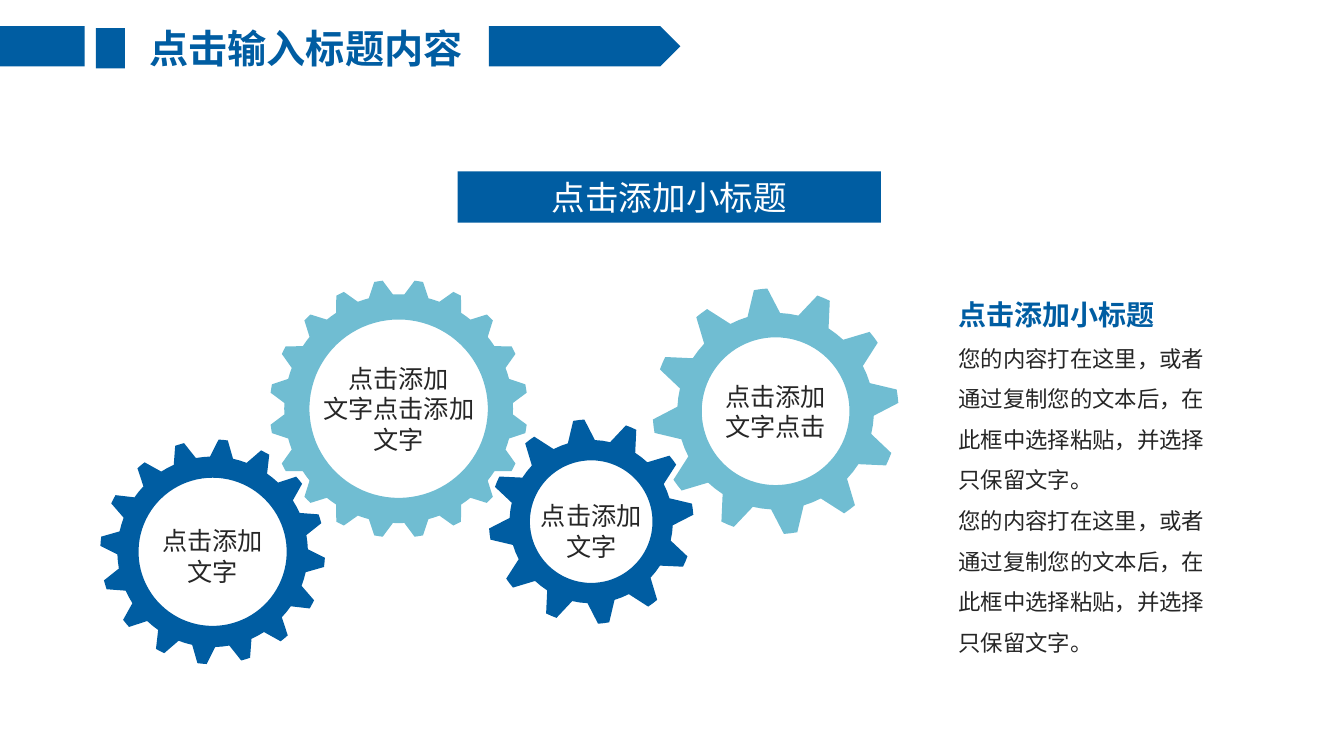
import math

import pptx
import pptx.dml.color
import pptx.enum.shapes
import pptx.enum.text
import pptx.oxml.ns
import pptx.util
from lxml import etree

BLUE = pptx.dml.color.RGBColor(0x00, 0x5D, 0xA2)
AQUA = pptx.dml.color.RGBColor(0x70, 0xBD, 0xD2)
INK = pptx.dml.color.RGBColor(0x26, 0x26, 0x26)
WHITE = pptx.dml.color.RGBColor(0xFF, 0xFF, 0xFF)
FONT = "Noto Sans CJK SC"

TITLE = "点击输入标题内容"
SUBTITLE = "点击添加小标题"
ADVICE = "您的内容打在这里，或者通过复制您的文本后，在此框中选择粘贴，并选择只保留文字。"
GEARS = [
    {"label": ["点击添加", "文字点击添加", "文字"], "center": (39.55, 40.55), "radii": (8.85, 11.35, 12.8),
     "teeth": 20, "turn": 9, "base": 0.34, "color": AQUA, "drop": 0},
    {"label": ["点击添加", "文字"], "center": (58.65, 51.75), "radii": (6.08, 8.1, 10.15),
     "teeth": 12, "turn": -7, "base": 0.32, "color": BLUE, "drop": 0.9},
    {"label": ["点击添加", "文字"], "center": (21.1, 54.75), "radii": (7.35, 9.45, 11.15),
     "teeth": 16, "turn": 5.4, "base": 0.31, "color": BLUE, "drop": 0.4},
    {"label": ["点击添加", "文字点击"], "center": (76.95, 40.8), "radii": (7.33, 9.75, 12.2),
     "teeth": 12, "turn": -7, "base": 0.32, "color": AQUA, "drop": 0},
]

CELL = pptx.util.Inches(0.1)
COLUMNS, ROWS = 133.33, 75
TIP_SHARE = 0.105
LINE_FACTOR = 1.21
HOLE_STEPS = 90

SHAPES = pptx.enum.shapes.MSO_SHAPE
ALIGN = pptx.enum.text.PP_ALIGN
ANCHOR = pptx.enum.text.MSO_ANCHOR
BARS = [
    (SHAPES.PENTAGON, (48.5, 2.6, 19, 4)),
    (SHAPES.RECTANGLE, (0, 2.6, 8.4, 4)),
    (SHAPES.RECTANGLE, (9.5, 2.8, 2.9, 4)),
]
BANNER_CELLS = (45.4, 17, 42, 5.1)
TITLE_CELLS = (12.4, 1.9, 35.9, 5.7)
BODY_CELLS = (94.1, 27.3, 28.3, 38.4)

TITLE_FORMAT = {"size": 28, "color": BLUE, "bold": True, "alignment": ALIGN.CENTER}
BANNER_FORMAT = {"size": 24, "color": WHITE, "alignment": ALIGN.CENTER}
LABEL_FORMAT = {"size": 18, "color": INK, "alignment": ALIGN.CENTER}
HEADING_FORMAT = {"size": 20, "color": BLUE, "bold": True, "spacing": 1.5}
ADVICE_FORMAT = {"size": 16, "color": INK, "spacing": 1.5}


def cells(*values):
    return [round(value * CELL) for value in values]


def set_all(target, values):
    for name, value in values.items():
        setattr(target, name, value)


def place(shape, box):
    set_all(shape, dict(zip(("left", "top", "width", "height"), cells(*box))))


def paint(shape, color):
    shape.shadow.inherit = False
    shape.fill.solid()
    shape.fill.fore_color.rgb = color
    shape.line.fill.background()


def write(shape, lines, anchor, margins=(1, 0.5)):
    frame = shape.text_frame
    side, edge = cells(*margins)
    set_all(frame, {
        "word_wrap": True, "auto_size": pptx.enum.text.MSO_AUTO_SIZE.NONE, "vertical_anchor": anchor,
        "margin_left": side, "margin_right": side, "margin_top": edge, "margin_bottom": edge,
    })
    for index, (text, style) in enumerate(lines):
        paragraph = frame.add_paragraph() if index else frame.paragraphs[0]
        properties = paragraph._p.get_or_add_pPr()
        properties.set("marL", "0")
        properties.set("indent", "0")
        etree.SubElement(properties, pptx.oxml.ns.qn("a:buNone"))
        height = style["size"] * LINE_FACTOR * style.get("spacing", 1)
        set_all(paragraph, {
            "alignment": style.get("alignment", ALIGN.LEFT), "line_spacing": pptx.util.Pt(round(height, 1)),
            "space_before": pptx.util.Pt(0), "space_after": pptx.util.Pt(0),
        })
        run = paragraph.add_run()
        run.text = text
        set_all(run.font, {
            "name": FONT, "size": pptx.util.Pt(style["size"]), "bold": style.get("bold", False),
        })
        run.font.color.rgb = style["color"]
        east_asian = etree.SubElement(run.font._element, pptx.oxml.ns.qn("a:ea"))
        east_asian.set("typeface", FONT)


def polar(center, radius, degrees):
    angle = math.radians(degrees)
    return cells(center[0] + radius * math.sin(angle), center[1] - radius * math.cos(angle))


def add_gear(slide, gear):
    center, (hole, root, tip) = gear["center"], gear["radii"]
    pitch = 360 / gear["teeth"]
    profile = [(-0.5, root), (-gear["base"], root), (-TIP_SHARE, tip), (0, tip),
               (TIP_SHARE, tip), (gear["base"], root)]
    rim = [polar(center, radius, gear["turn"] + (tooth + share) * pitch)
           for tooth in range(gear["teeth"]) for share, radius in profile]
    opening = [polar(center, hole, -step * 360 / HOLE_STEPS) for step in range(HOLE_STEPS)]
    builder = slide.shapes.build_freeform(*rim[0])
    builder.add_line_segments(rim[1:], close=True)
    builder.move_to(*opening[0])
    builder.add_line_segments(opening[1:], close=True)
    paint(builder.convert_to_shape(), gear["color"])

    box = (center[0] - hole, center[1] - hole + gear["drop"], 2 * hole, 2 * hole)
    label = slide.shapes.add_textbox(*cells(*box))
    write(label, [(line, LABEL_FORMAT) for line in gear["label"]], ANCHOR.MIDDLE, (0, 0))


def main():
    presentation = pptx.Presentation()
    presentation.slide_width, presentation.slide_height = cells(COLUMNS, ROWS)
    slide = presentation.slides.add_slide(presentation.slide_layouts[1])
    title, body = slide.shapes.title, slide.placeholders[1]
    place(title, TITLE_CELLS)
    write(title, [(TITLE, TITLE_FORMAT)], ANCHOR.TOP)
    place(body, BODY_CELLS)
    write(body, [(SUBTITLE, HEADING_FORMAT)] + [(ADVICE, ADVICE_FORMAT)] * 2, ANCHOR.TOP)
    for gear in GEARS:
        add_gear(slide, gear)
    banner = slide.shapes.add_shape(SHAPES.RECTANGLE, *cells(*BANNER_CELLS))
    paint(banner, BLUE)
    write(banner, [(SUBTITLE, BANNER_FORMAT)], ANCHOR.MIDDLE)
    for kind, box in BARS:
        paint(slide.shapes.add_shape(kind, *cells(*box)), BLUE)
    presentation.save("out.pptx")


if __name__ == "__main__":
    main()
